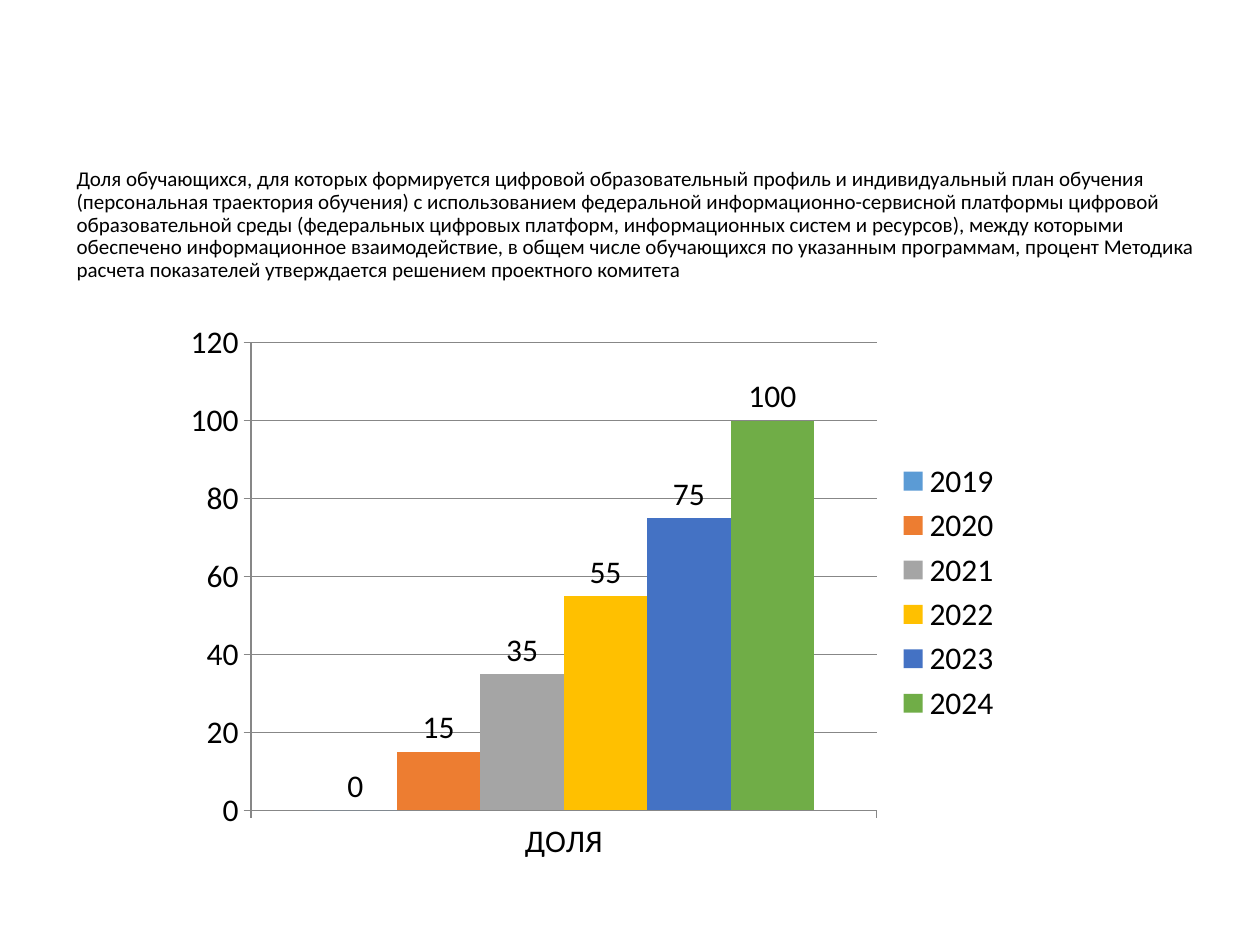
from pptx import Presentation
from pptx import util as u
from pptx.chart.data import CategoryChartData
from pptx.dml.color import RGBColor
from pptx.enum import chart as ch, text as t

BLACK = RGBColor(0x00, 0x00, 0x00)
GREY = RGBColor(0x87, 0x87, 0x87)
BLUE = RGBColor(0x5B, 0x9B, 0xD5)
ORANGE = RGBColor(0xED, 0x7D, 0x31)
SILVER = RGBColor(0xA5, 0xA5, 0xA5)
YELLOW = RGBColor(0xFF, 0xC0, 0x00)
INDIGO = RGBColor(0x44, 0x72, 0xC4)
GREEN = RGBColor(0x70, 0xAD, 0x47)
FONT = "Calibri"

deck = Presentation()
deck.slide_width, deck.slide_height = u.Inches(10), u.Inches(7.5)
slide = deck.slides.add_slide(deck.slide_layouts[6])

# Indicator description
description = slide.shapes.add_textbox(
    u.Inches(0.51), u.Inches(1.31), u.Inches(9.12), u.Inches(1.67)).text_frame
description.word_wrap = True
description.vertical_anchor = t.MSO_ANCHOR.TOP
description.margin_top = u.Inches(0.03)
paragraph = description.paragraphs[0]
paragraph.line_spacing = 0.9
run = paragraph.add_run()
run.text = (
    "Доля обучающихся, для которых формируется цифровой образовательный профиль "
    "и индивидуальный план обучения (персональная траектория обучения) "
    "с использованием федеральной информационно-сервисной платформы цифровой "
    "образовательной среды (федеральных цифровых платформ, информационных систем "
    "и ресурсов), между которыми обеспечено информационное взаимодействие, "
    "в общем числе обучающихся по указанным программам, процент Методика расчета "
    "показателей утверждается решением проектного комитета")
run.font.name = FONT
run.font.size = u.Pt(12)
run.font.color.rgb = BLACK

# Share by year
shares = [("2019", 0, BLUE), ("2020", 15, ORANGE), ("2021", 35, SILVER),
          ("2022", 55, YELLOW), ("2023", 75, INDIGO), ("2024", 100, GREEN)]
share_data = CategoryChartData()
share_data.categories = ["ДОЛЯ"]
for year, share, _ in shares:
    share_data.add_series(year, [share])
share_chart = slide.shapes.add_chart(
    ch.XL_CHART_TYPE.COLUMN_CLUSTERED, u.Inches(1.38), u.Inches(2.48),
    u.Inches(6.67), u.Inches(4.44), share_data).chart
share_chart.has_title = False
share_chart.font.name = FONT
share_chart.font.size = u.Pt(18)
share_chart.font.color.rgb = BLACK

# Columns and their values
columns = share_chart.plots[0]
columns.vary_by_categories = False
columns.gap_width = 150
columns.overlap = 0
for series, (_, _, colour) in zip(columns.series, shares):
    series.format.fill.solid()
    series.format.fill.fore_color.rgb = colour
    series.invert_if_negative = False
    series.data_labels.show_value = True
    series.data_labels.position = ch.XL_LABEL_POSITION.OUTSIDE_END

# Axes and gridlines
for axis in (share_chart.category_axis, share_chart.value_axis):
    axis.major_tick_mark = ch.XL_TICK_MARK.OUTSIDE
    axis.format.line.color.rgb = GREY
    axis.format.line.width = u.Pt(0.75)
scale = share_chart.value_axis
scale.minimum_scale, scale.maximum_scale, scale.major_unit = 0, 120, 20
scale.has_major_gridlines = True
scale.major_gridlines.format.line.color.rgb = GREY
scale.major_gridlines.format.line.width = u.Pt(0.75)

# Legend of years
share_chart.has_legend = True
share_chart.legend.position = ch.XL_LEGEND_POSITION.RIGHT
share_chart.legend.include_in_layout = False

deck.save("out.pptx")
